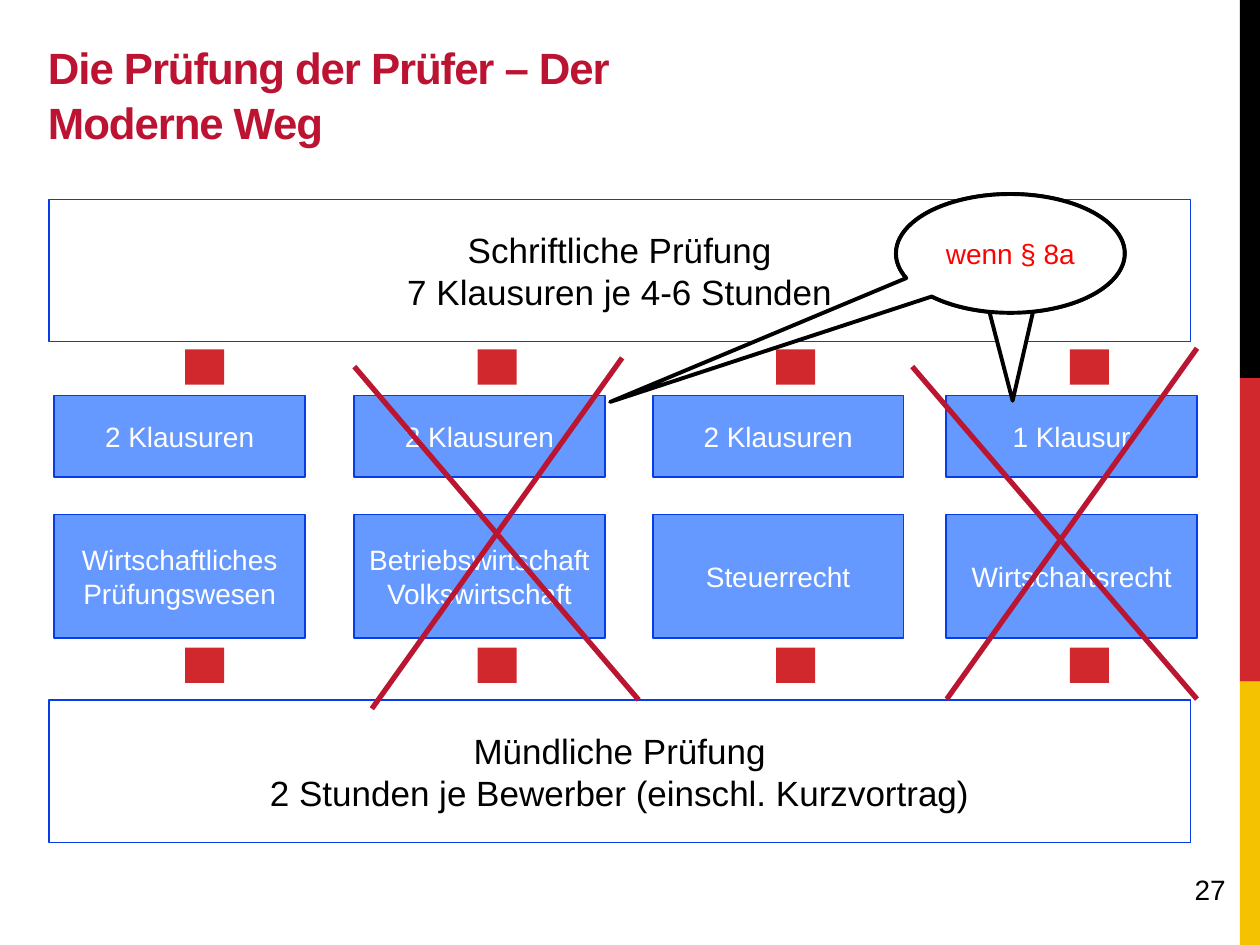
from lxml import etree
from pptx import Presentation
from pptx import util as u
from pptx.dml import color
from pptx.enum import shapes, text
from pptx.oxml import ns

Pt = u.Pt
KINDS = shapes.MSO_SHAPE
CARD_LEFTS = (31, 202.3, 373, 540.7)
MARKER_LEFTS = (105.8, 272.9, 443.5, 611.3)
KLAUSUREN = ("2 Klausuren", "2 Klausuren", "2 Klausuren", "1 Klausur")
SUBJECTS = ("Wirtschaftliches\nPrüfungswesen", "Betriebswirtschaft\nVolkswirtschaft",
            "Steuerrecht", "Wirtschaftsrecht")


def rgb(value):
    """Turn a hex string into a colour."""
    return color.RGBColor.from_string(value)


def write(item, words, size, hue, align=text.PP_ALIGN.CENTER):
    """Set and format the text of a shape."""
    frame = item.text_frame
    frame.text = words
    for para in frame.paragraphs:
        para.alignment = align
        for span in para.runs:
            span.font.size = Pt(size)
            span.font.name = "Arial"
            span.font.color.rgb = rgb(hue)


def add_box(page, box, fill, line=None, width=1, kind=KINDS.RECTANGLE):
    """Draw a filled preset shape in the given box."""
    item = page.shapes.add_shape(kind, *map(Pt, box))
    item.shadow.inherit = False
    item.fill.solid()
    item.fill.fore_color.rgb = rgb(fill)
    if line:
        item.line.color.rgb = rgb(line)
        item.line.width = Pt(width)
    else:
        item.line.fill.background()
    item.text_frame.vertical_anchor = text.MSO_ANCHOR.MIDDLE
    return item


def add_panel(page, box, words, size=20, fill="FFFFFF", hue="000000"):
    """Draw a blue-edged box with centred text."""
    panel = add_box(page, box, fill, "063DE8")
    write(panel, words, size, hue)
    panel.text_frame.word_wrap = False


def add_cards(page, top, height, labels):
    """Draw a row of four blue cards."""
    for left, label in zip(CARD_LEFTS, labels):
        add_panel(page, (left, top, 143.3, height), label, 16, "6699FF", "FFFFFF")


def add_markers(page, top):
    """Draw a row of four red squares."""
    for left in MARKER_LEFTS:
        add_box(page, (left, top, 22.3, 20.2), "D1282E")


def add_cross(page, falling, rising):
    """Strike out a column with two lines."""
    for ends in (falling, rising):
        line = page.shapes.add_connector(shapes.MSO_CONNECTOR.STRAIGHT, *map(Pt, ends))
        line.line.color.rgb = rgb("BB1631")
        line.line.width = Pt(3)
        etree.SubElement(line._element.spPr, ns.qn("a:effectLst"))


def add_callout(page, box, tip):
    """Draw an oval callout whose tail ends at the given tip."""
    callout = add_box(page, box, "FFFFFF", "000000", 2.25, KINDS.OVAL_CALLOUT)
    callout.adjustments[0], callout.adjustments[1] = tip
    write(callout, "wenn § 8a", 16, "FF0000")


def add_title(page, box, words):
    """Place the title placeholder."""
    title = page.shapes.title
    title.left, title.top, title.width, title.height = map(Pt, box)
    write(title, words, 25, "BB1331", text.PP_ALIGN.LEFT)
    frame = title.text_frame
    frame.word_wrap = True
    frame.auto_size = text.MSO_AUTO_SIZE.NONE
    frame.vertical_anchor = text.MSO_ANCHOR.BOTTOM
    para = frame.paragraphs[0]
    para.line_spacing = 1.05
    span = para.runs[0]
    span.font.bold = True
    span.font._element.set("spc", "-60")


def add_edge(page, left, width):
    """Draw the black, red and gold stripe down the side."""
    for top, height, fill in ((0, 216, "000000"), (216, 173.5, "D1282E"),
                              (389.5, 150.5, "F5C201")):
        add_box(page, (left, top, width, height), fill)


def add_number(page, box, words):
    """Write the page number."""
    number = page.shapes.add_textbox(*map(Pt, box))
    number.text_frame.vertical_anchor = text.MSO_ANCHOR.MIDDLE
    number.text_frame.word_wrap = True
    write(number, words, 16, "000000")


def main():
    """Build the slide and save it."""
    deck = Presentation()
    deck.slide_width, deck.slide_height = Pt(720), Pt(540)
    page = deck.slides.add_slide(deck.slide_layouts[5])
    add_title(page, (20.2, 12.2, 420.5, 76.3), "Die Prüfung der Prüfer – Der Moderne Weg")
    add_edge(page, 708.5, 11.5)
    add_number(page, (663, 479.5, 57, 57), "27")
    add_panel(page, (28, 114, 652.3, 81.2), "Schriftliche Prüfung\n7 Klausuren je 4-6 Stunden")
    add_panel(page, (28, 400.2, 652.3, 81.2),
              "Mündliche Prüfung\n2 Stunden je Bewerber (einschl. Kurzvortrag)")
    add_markers(page, 199.6)
    add_cards(page, 226, 46.7, KLAUSUREN)
    add_cards(page, 294, 70.6, SUBJECTS)
    add_markers(page, 370)
    bubble = (512, 110.9, 130.7, 67.9)
    add_cross(page, (202.5, 209.5, 365, 400), (212.5, 405, 355.5, 204.5))
    add_callout(page, bubble, (0.01, 1.24))
    add_cross(page, (521.3, 209.5, 684, 399.5), (541, 399.5, 684, 199))
    add_callout(page, bubble, (-1.75, 1.25))
    deck.save("out.pptx")


if __name__ == "__main__":
    main()
